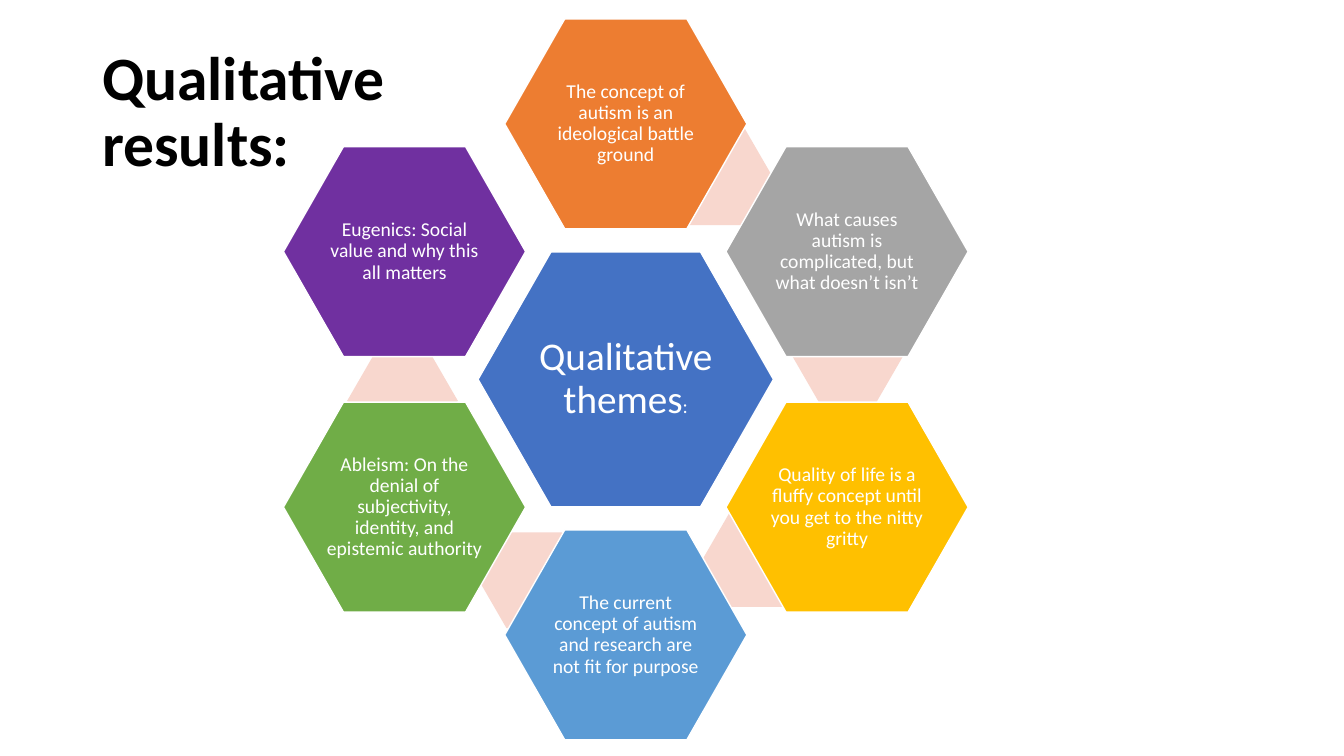
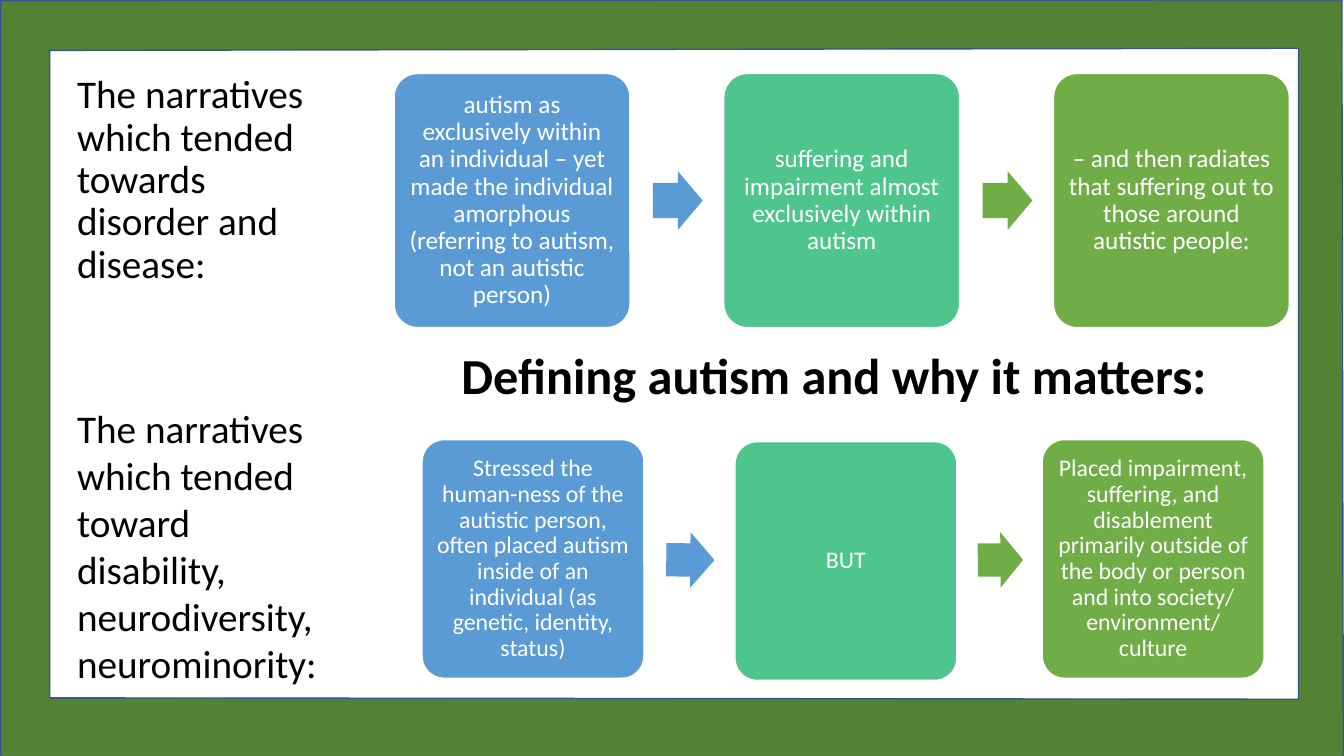
import math
from dataclasses import dataclass

import pptx
import pptx.dml.color
import pptx.enum.shapes
import pptx.enum.text
import pptx.util

Pt = pptx.util.Pt
SHAPE = pptx.enum.shapes.MSO_SHAPE
ANCHOR = pptx.enum.text.MSO_ANCHOR
ALIGN = pptx.enum.text.PP_ALIGN


@dataclass(frozen=True)
class Theme:
    font: str = "Calibri"
    black: str = "000000"
    white: str = "FFFFFF"
    blue: str = "4472C4"
    orange: str = "ED7D31"
    gray: str = "A5A5A5"
    gold: str = "FFC000"
    sky: str = "5B9BD5"
    green: str = "70AD47"
    purple: str = "7030A0"
    pink: str = "F8D7CE"
    mint: str = "4DC58D"
    frame: str = "548235"
    frame_edge: str = "325491"
    results_title: int = 44
    defining_title: int = 36
    lead: int = 28
    theme_label: int = 14
    line: float = 0.9


THEME = Theme()

RESULTS_TITLE = "Qualitative results:"
HUB_TEXT, HUB_COLON = "Qualitative themes", ":"
HUB_CENTER = (447, 271)
HUB_SIZE = (211, 182)
RING_RADIUS = 182.5
RING_SIZE = (173, 150)
LINK_SIZE = (79, 68.5)
RING = [
    ("The concept of autism is an ideological battle ground", THEME.orange, (512.5, 126.5)),
    ("What causes autism is complicated, but what doesn’t isn’t", THEME.gray, (605.5, 254.5)),
    ("Quality of life is a fluffy concept until you get to the nitty gritty", THEME.gold, (541.5, 399.25)),
    ("The current concept of autism and research are not fit for purpose", THEME.sky, (381.5, 414.5)),
    ("Ableism: On the denial of subjectivity, identity, and epistemic authority", THEME.green, (287.5, 286.25)),
    ("Eugenics: Social value and why this all matters", THEME.purple, None),
]

DEFINING_TITLE = "Defining autism and why it matters:"
DISORDER_LEAD = "The narratives which tended towards disorder and disease:"
DIVERSITY_LEAD = "The narratives which tended toward disability, neurodiversity, neurominority:"
FRAME_OUTER = [(0.5, 0.5), (958.5, 0), (959.5, 540.5), (0.5, 540.5)]
FRAME_INNER = [(35.5, 36), (35.5, 498.5), (927.5, 499.5), (927.5, 34.5)]
STEP_COLORS = [THEME.sky, THEME.mint, THEME.green]
ARROW_COLORS = [THEME.sky, THEME.green]
FLOWS = [
    {
        "size": (168.5, 181.5),
        "type_size": 18,
        "corners": [(281.5, 52.5), (517, 52.5), (752.5, 52.5)],
        "steps": [
            "autism as exclusively within an individual – yet made the individual amorphous "
            "(referring to autism, not an autistic person)",
            "suffering and impairment almost exclusively within autism",
            "– and then radiates that suffering out to those around autistic people:",
        ],
    },
    {
        "size": (158.5, 170.5),
        "type_size": 17,
        "corners": [(301.5, 314), (525, 315.5), (744.5, 314)],
        "steps": [
            "Stressed the human-ness of the autistic person, often placed autism inside of an "
            "individual (as genetic, identity, status)",
            "BUT",
            "Placed impairment, suffering, and disablement primarily outside of the body or "
            "person and into society/ environment/ culture",
        ],
    },
]


def rgb(color):
    return pptx.dml.color.RGBColor.from_string(color)


def paint(shape, fill, line=None):
    shape.shadow.inherit = False
    shape.fill.solid()
    shape.fill.fore_color.rgb = rgb(fill)
    if line:
        shape.line.color.rgb = rgb(line)
        shape.line.width = Pt(1)
    else:
        shape.line.fill.background()


def write(shape, text, size, color, bold=False, align=ALIGN.LEFT,
          anchor=ANCHOR.MIDDLE, spacing=THEME.line, inset=None):
    frame = shape.text_frame
    frame.word_wrap = True
    frame.vertical_anchor = anchor
    if inset is not None:
        frame.margin_left = frame.margin_right = Pt(inset)
        frame.margin_top = frame.margin_bottom = Pt(inset)
    paragraph = frame.paragraphs[0]
    paragraph.add_run().text = text
    paragraph.alignment = align
    paragraph.line_spacing = spacing
    paragraph.font.name = THEME.font
    paragraph.font.size = Pt(size)
    paragraph.font.bold = bold
    paragraph.font.color.rgb = rgb(color)
    return paragraph


def add_text(slide, box, text, size, **style):
    area = slide.shapes.add_textbox(*map(Pt, box))
    write(area, text, size, THEME.black, **style)


def add_centered(slide, kind, center, size, fill, adjustments, line=None):
    (x, y), (width, height) = center, size
    shape = slide.shapes.add_shape(
        kind, Pt(x - width / 2), Pt(y - height / 2), Pt(width), Pt(height))
    for index, value in enumerate(adjustments):
        shape.adjustments[index] = value
    paint(shape, fill, line)
    return shape


def add_hexagon(slide, center, size, fill, text, type_size):
    hexagon = add_centered(slide, SHAPE.HEXAGON, center, size, fill, [0.286], THEME.white)
    return write(hexagon, text, type_size, THEME.white, align=ALIGN.CENTER,
                 inset=type_size * 0.1)


def build_results(slide):
    add_text(slide, (66, 29, 321, 104), RESULTS_TITLE, THEME.results_title, bold=True)
    hub = add_hexagon(slide, HUB_CENTER, HUB_SIZE, THEME.blue, HUB_TEXT, THEME.lead)
    colon = hub.add_run()
    colon.text = HUB_COLON
    colon.font.size = Pt(THEME.theme_label)
    for index, (text, fill, link) in enumerate(RING):
        angle = math.tau * index / len(RING)
        center = (HUB_CENTER[0] + RING_RADIUS * math.sin(angle),
                  HUB_CENTER[1] - RING_RADIUS * math.cos(angle))
        if link:
            add_centered(slide, SHAPE.HEXAGON, link, LINK_SIZE, THEME.pink, [0.289])
        add_hexagon(slide, center, RING_SIZE, fill, text, THEME.theme_label)


def add_frame(slide):
    outer, inner = ([(Pt(x), Pt(y)) for x, y in outline]
                    for outline in (FRAME_OUTER, FRAME_INNER))
    border = slide.shapes.build_freeform(*outer[0])
    border.add_line_segments(outer[1:], close=True)
    border.move_to(*inner[0])
    border.add_line_segments(inner[1:], close=True)
    paint(border.convert_to_shape(), THEME.frame, THEME.frame_edge)


def add_flow(slide, flow):
    width, height = flow["size"]
    centers = [(x + width / 2, y + height / 2) for x, y in flow["corners"]]
    for text, center, fill in zip(flow["steps"], centers, STEP_COLORS):
        step = add_centered(slide, SHAPE.ROUNDED_RECTANGLE, center, flow["size"],
                            fill, [0.1], THEME.white)
        write(step, text, flow["type_size"], THEME.white, align=ALIGN.CENTER,
              inset=flow["type_size"] * 0.3)
    for start, end, fill in zip(centers, centers[1:], ARROW_COLORS):
        run, rise = end[0] - start[0], end[1] - start[1]
        gap = run - width
        middle = (start[0] + width / 2 + gap * 0.51, (start[1] + end[1]) / 2)
        arrow = add_centered(slide, SHAPE.RIGHT_ARROW, middle,
                             (gap * 0.53, width * 0.25), fill, [0.6, 0.5])
        arrow.rotation = math.degrees(math.atan2(rise, run))


def build_defining(slide):
    add_text(slide, (322.5, 218, 550, 104.5), DEFINING_TITLE, THEME.defining_title, bold=True)
    add_text(slide, (48, 50, 181.5, 159), DISORDER_LEAD, THEME.lead, anchor=ANCHOR.TOP)
    add_frame(slide)
    for flow in FLOWS:
        add_flow(slide, flow)
    add_text(slide, (48, 285, 199, 211), DIVERSITY_LEAD, THEME.lead,
             anchor=ANCHOR.TOP, spacing=1.0)


def main():
    deck = pptx.Presentation()
    deck.slide_width, deck.slide_height = Pt(960), Pt(540)
    for build in (build_results, build_defining):
        build(deck.slides.add_slide(deck.slide_layouts[6]))
    deck.save("out.pptx")


if __name__ == "__main__":
    main()
